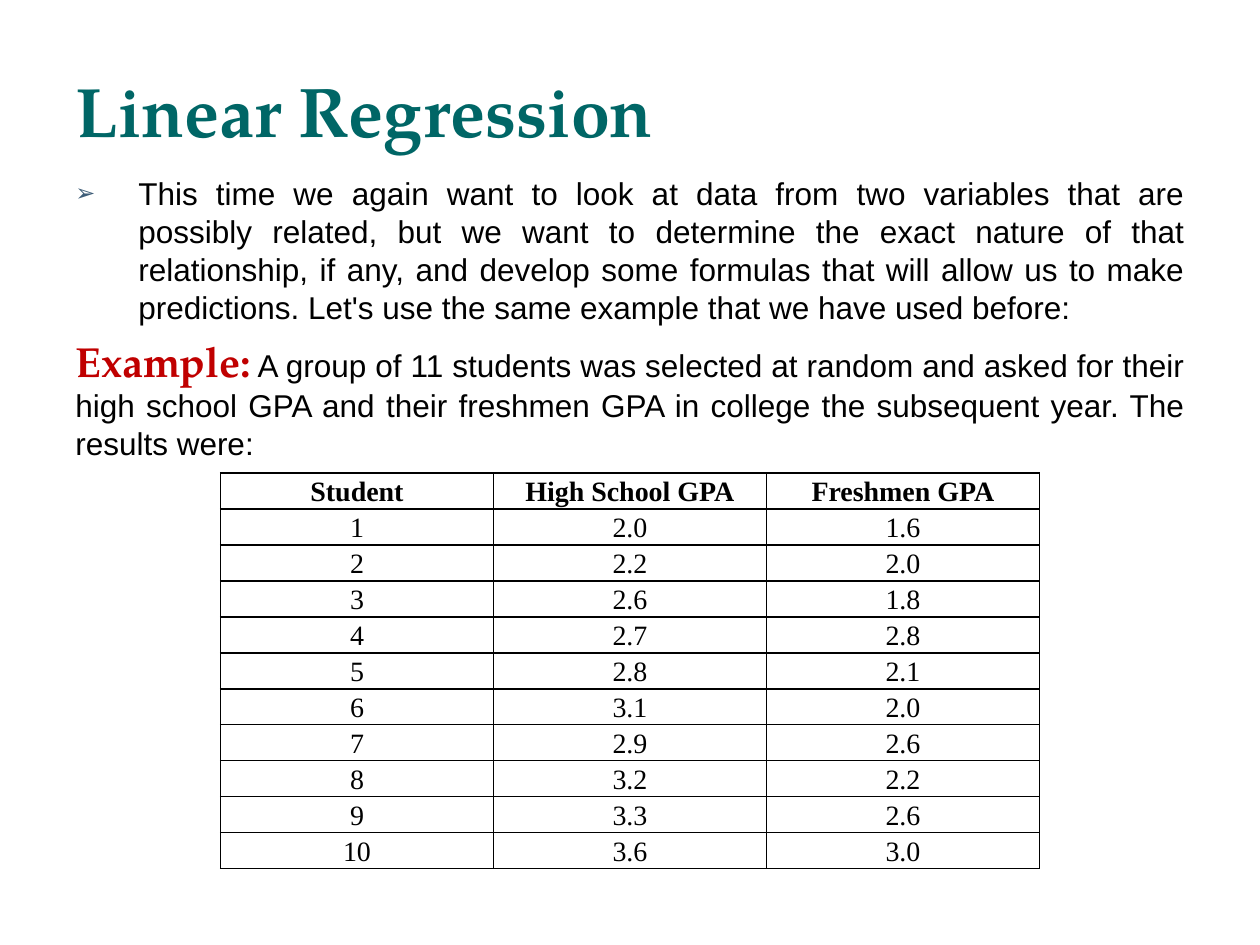
from lxml.etree import SubElement
from pptx import Presentation
from pptx.dml.color import RGBColor
from pptx.enum.text import MSO_ANCHOR, MSO_AUTO_SIZE, PP_ALIGN
from pptx.oxml.ns import qn
from pptx.util import Emu, Pt

TEAL = RGBColor(0x00, 0x66, 0x66)
RED = RGBColor(0xC0, 0x00, 0x00)
BLACK = RGBColor(0x00, 0x00, 0x00)
SLATE = RGBColor(0x3E, 0x5D, 0x78)

HEADING_FONT, BODY_FONT, TABLE_FONT = "TeX Gyre Pagella", "Arial", "Times New Roman"

TITLE = "Linear Regression"
INTRODUCTION = (
    "This time we again want to look at data from two variables that are possibly "
    "related, but we want to determine the exact nature of that relationship, if any, "
    "and develop some formulas that will allow us to make predictions. Let's use the "
    "same example that we have used before:"
)
EXAMPLE_LABEL = "Example:"
EXAMPLE = (
    " A group of 11 students was selected at random and asked for their high school "
    "GPA and their freshmen GPA in college the subsequent year. The results were:"
)
HEADERS = ("Student", "High School GPA", "Freshmen GPA")
GRADES = [
    ("2.0", "1.6"), ("2.2", "2.0"), ("2.6", "1.8"), ("2.7", "2.8"), ("2.8", "2.1"),
    ("3.1", "2.0"), ("2.9", "2.6"), ("3.2", "2.2"), ("3.3", "2.6"), ("3.6", "3.0"),
]

SLIDE_WIDTH, SLIDE_HEIGHT = 1260, 945
TITLE_BOX = (63, 22, 1134, 136)
BODY_BOX = (63, 168, 1134, 680)
TABLE_TOP = 473
COLUMN_WIDTH, ROW_HEIGHT = 273, 36
BULLET_INDENT = 63


def px(length):
    return Emu(round(length * 914400 / 126))


def place(shape, box):
    shape.left, shape.top, shape.width, shape.height = map(px, box)


def add_run(paragraph, text, font, size, color, bold=False):
    run = paragraph.add_run()
    run.text = text
    run.font.name = font
    run.font.size = Pt(size)
    run.font.color.rgb = color
    run.font.bold = bold


def format_body(paragraph):
    paragraph.alignment = PP_ALIGN.JUSTIFY
    paragraph.space_before = Pt(6)
    paragraph.line_spacing = 1.0


def add_bullet(paragraph):
    properties = paragraph._p.get_or_add_pPr()
    properties.set("marL", str(px(BULLET_INDENT)))
    properties.set("indent", str(-px(BULLET_INDENT)))
    color = SubElement(properties, qn("a:buClr"))
    SubElement(color, qn("a:srgbClr"), val=str(SLATE))
    SubElement(properties, qn("a:buSzPct"), val="76000")
    SubElement(properties, qn("a:buFont"), typeface=BODY_FONT)
    SubElement(properties, qn("a:buChar"), char="➢")


def add_borders(cell):
    properties = cell._tc.get_or_add_tcPr()
    for side in ("lnL", "lnR", "lnT", "lnB"):
        line = SubElement(properties, qn(f"a:{side}"), w=str(Pt(1)))
        fill = SubElement(line, qn("a:solidFill"))
        SubElement(fill, qn("a:srgbClr"), val=str(BLACK))


def fill_cell(cell, text, bold):
    add_borders(cell)
    cell.fill.background()
    cell.margin_left = cell.margin_right = cell.margin_top = cell.margin_bottom = 0
    cell.vertical_anchor = MSO_ANCHOR.MIDDLE
    paragraph = cell.text_frame.paragraphs[0]
    paragraph.alignment = PP_ALIGN.CENTER
    paragraph.line_spacing = 1.06
    add_run(paragraph, text, TABLE_FONT, 16, BLACK, bold)


def add_title(slide):
    title = slide.shapes.title
    place(title, TITLE_BOX)
    frame = title.text_frame
    frame.auto_size = MSO_AUTO_SIZE.NONE
    frame.vertical_anchor = MSO_ANCHOR.BOTTOM
    paragraph = frame.paragraphs[0]
    paragraph.alignment = PP_ALIGN.LEFT
    add_run(paragraph, TITLE, HEADING_FONT, 40, TEAL, True)


def add_body(slide):
    frame = slide.shapes.add_textbox(*map(px, BODY_BOX)).text_frame
    frame.word_wrap = True
    introduction = frame.paragraphs[0]
    format_body(introduction)
    add_bullet(introduction)
    add_run(introduction, INTRODUCTION, BODY_FONT, 18, BLACK)
    example = frame.add_paragraph()
    format_body(example)
    add_run(example, EXAMPLE_LABEL, HEADING_FONT, 24, RED, True)
    add_run(example, EXAMPLE, BODY_FONT, 18, BLACK)


def add_grades(slide):
    rows = [HEADERS] + [(str(n), *pair) for n, pair in enumerate(GRADES, 1)]
    width = COLUMN_WIDTH * len(HEADERS)
    box = ((SLIDE_WIDTH - width) / 2, TABLE_TOP, width, ROW_HEIGHT * len(rows))
    table = slide.shapes.add_table(len(rows), len(HEADERS), *map(px, box)).table
    table.horz_banding = False
    for row_index, row in enumerate(rows):
        for column_index, text in enumerate(row):
            fill_cell(table.cell(row_index, column_index), text, row_index == 0)


def main():
    presentation = Presentation()
    presentation.slide_width = px(SLIDE_WIDTH)
    presentation.slide_height = px(SLIDE_HEIGHT)
    slide = presentation.slides.add_slide(presentation.slide_layouts[5])
    add_title(slide)
    add_body(slide)
    add_grades(slide)
    presentation.save("out.pptx")


if __name__ == "__main__":
    main()
